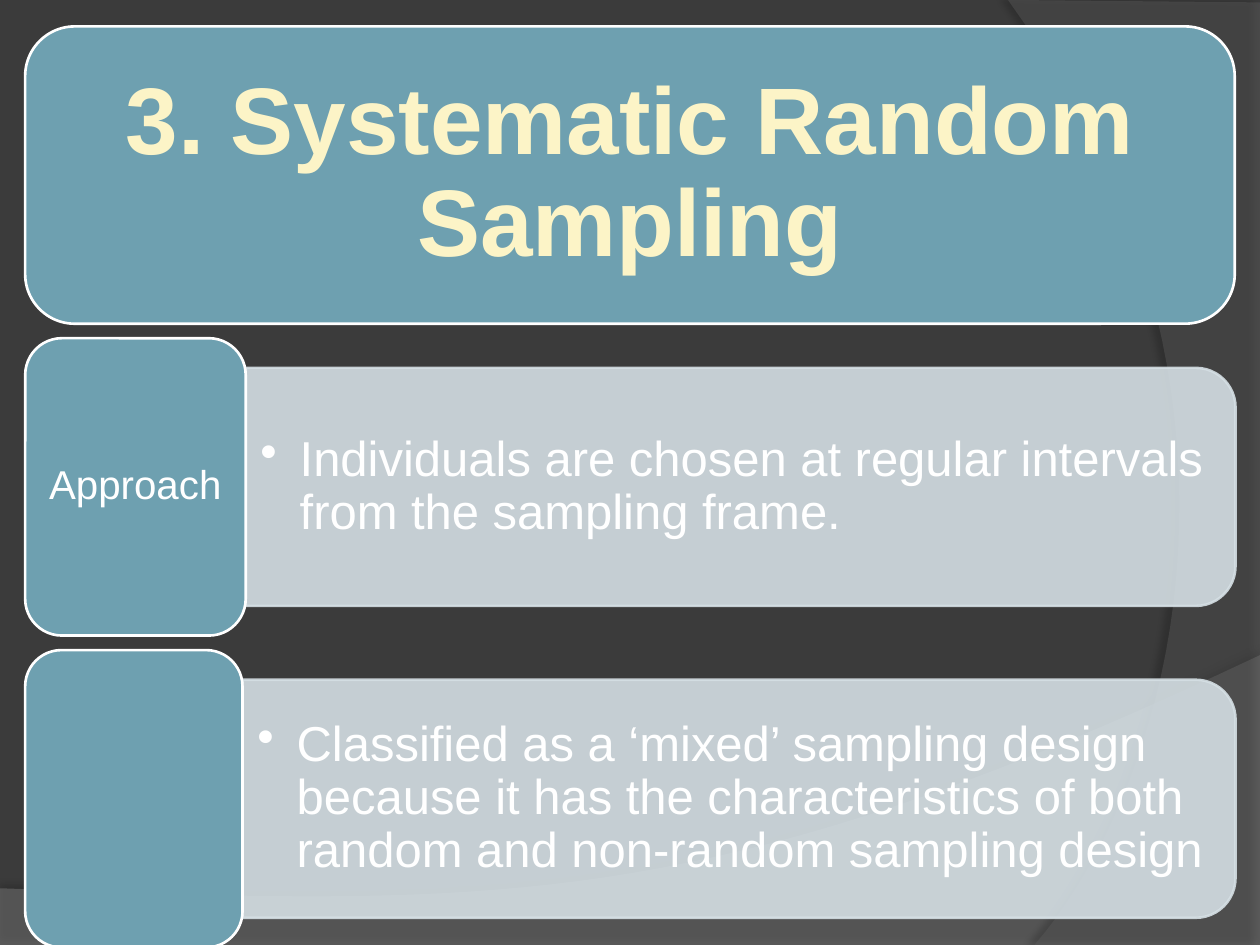
from dataclasses import dataclass
from pptx import Presentation
from pptx import util as u
from pptx.dml.color import RGBColor
from pptx.enum import shapes, text
from pptx.oxml import ns
from lxml import etree

Pt = u.Pt
HUES = {"back": "3B3B3B", "wave": "7F7F7F", "arc": "5E5E5E", "teal": "6EA0B0",
        "pale": "D5DFE4", "cream": "FCF4C7", "white": "FFFFFF", "black": "000000"}
LEFT, TOP, PITCH, HIGH = 14.4, 15.1, 178.2, 169.9
RIGHT, BODY, EDGE = 706, 136, 699.1


@dataclass
class Row:
    label: str
    wide: float
    body: str


@dataclass
class Curve:
    hue: str
    alpha: int
    start: tuple
    bends: list
    tail: list
    shade: tuple


ROWS = [
    Row("Approach", 126, "Individuals are chosen at regular intervals from the sampling frame."),
    Row("", 124.2, "Classified as a ‘mixed’ sampling design because it has the "
        "characteristics of both random and non-random sampling design"),
]
CURVES = [
    Curve("wave", 45, (720, 374.4), [((402.5, 524.9), (281.5, 517.7), (0, 507.6))],
          [(0, 540), (720, 540)], (35, 4, 3.5, 270)),
    Curve("arc", 40, (591.1, 540), [((673.2, 445.7), (733, 216), (576, 0))],
          [(720, 1.4), (720, 540)], (45, 4, 4, 180)),
]


def rgb(hue: str) -> RGBColor:
    return RGBColor.from_string(HUES[hue])


def sub(node, tag: str, **attrs):
    return etree.SubElement(node, ns.qn(tag), {k: str(v) for k, v in attrs.items()})


def paint(fill, node, hue: str, alpha: int = 100) -> None:
    fill.solid()
    fill.fore_color.rgb = rgb(hue)
    if alpha < 100:
        tint = node.find(ns.qn("a:solidFill")).find(ns.qn("a:srgbClr"))
        sub(tint, "a:alpha", val=alpha * 1000)


def bezier(a: tuple, b: tuple, c: tuple, d: tuple, steps: int = 40) -> list:
    spots = []
    for i in range(1, steps + 1):
        t = i / steps
        s = 1 - t
        spots.append(tuple(s**3 * p + 3 * s * s * t * q + 3 * s * t * t * r + t**3 * w
                           for p, q, r, w in zip(a, b, c, d)))
    return spots


def sweep(slide, curve: Curve) -> None:
    spots, last = [], curve.start
    for bend in curve.bends:
        spots += bezier(last, *bend)
        last = bend[-1]
    pen = slide.shapes.build_freeform(*map(Pt, curve.start))
    pen.add_line_segments([(Pt(x), Pt(y)) for x, y in spots + curve.tail], close=True)
    form = pen.convert_to_shape()
    props = form.element.spPr
    paint(form.fill, props, curve.hue, curve.alpha)
    form.line.fill.background()
    form.shadow.inherit = False
    alpha, blur, dist, turn = curve.shade
    glow = sub(props.find(ns.qn("a:effectLst")), "a:outerShdw", blurRad=Pt(blur),
               dist=Pt(dist), dir=turn * 60000, algn="ctr", rotWithShape=0)
    sub(sub(glow, "a:srgbClr", val=HUES["black"]), "a:alpha", val=alpha * 1000)


def card(slide, kind, box: tuple, hue: str, edge: str, alpha: int = 100):
    form = slide.shapes.add_shape(kind, *map(Pt, box))
    form.shadow.inherit = False
    paint(form.fill, form.element.spPr, hue, alpha)
    form.line.width = Pt(1.5)
    paint(form.line.fill, form.line._get_or_add_ln(), edge, alpha)
    return form


def write(form, words: str, size: float, pad: tuple, hue: str = "white",
          bold: bool = False, dot: bool = False) -> None:
    frame = form.text_frame
    frame.word_wrap = True
    frame.vertical_anchor = text.MSO_ANCHOR.MIDDLE
    frame.margin_left = frame.margin_right = Pt(pad[0])
    frame.margin_top = frame.margin_bottom = Pt(pad[1])
    para = frame.paragraphs[0]
    para.line_spacing = 0.9
    para.alignment = text.PP_ALIGN.LEFT if dot else text.PP_ALIGN.CENTER
    if dot:
        para.level = 1
        props = para._p.get_or_add_pPr()
        props.set("marL", str(Pt(22.5)))
        props.set("indent", str(Pt(-22.5)))
        sub(props, "a:buChar", char="•")
    run = para.add_run()
    run.text = words
    run.font.name, run.font.size, run.font.bold = "Arial", Pt(size), bold
    run.font.color.rgb = rgb(hue)


def draw(slide, row: Row, top: float) -> None:
    side, mid = LEFT + row.wide, top + HIGH / 2
    wide = RIGHT - side
    panel = card(slide, shapes.MSO_SHAPE.ROUND_2_SAME_RECTANGLE,
                 ((side + RIGHT - BODY) / 2, mid - wide / 2, BODY, wide), "pale", "pale", 90)
    panel.rotation = 90
    note = slide.shapes.add_textbox(Pt(side), Pt(mid - 61.2), Pt(EDGE - side), Pt(122.4))
    write(note, row.body, 28, (8.4, 4.2), dot=True)
    tab = card(slide, shapes.MSO_SHAPE.ROUNDED_RECTANGLE,
               (LEFT, top, row.wide, HIGH), "teal", "white")
    if row.label:
        write(tab, row.label, 23, (6.9, 3.45))


def main() -> None:
    """Build the systematic random sampling slide."""
    deck = Presentation()
    deck.slide_width, deck.slide_height = Pt(720), Pt(540)
    slide = deck.slides.add_slide(deck.slide_layouts[6])
    slide.background.fill.solid()
    slide.background.fill.fore_color.rgb = rgb("back")
    for curve in CURVES:
        sweep(slide, curve)
    head = card(slide, shapes.MSO_SHAPE.ROUNDED_RECTANGLE,
                (LEFT, TOP, 691.2, HIGH), "teal", "white")
    write(head, "3. Systematic Random Sampling", 54, (16.2, 8.1), "cream", bold=True)
    for i, row in enumerate(ROWS, 1):
        draw(slide, row, TOP + i * PITCH)
    deck.save("out.pptx")


if __name__ == "__main__":
    main()
